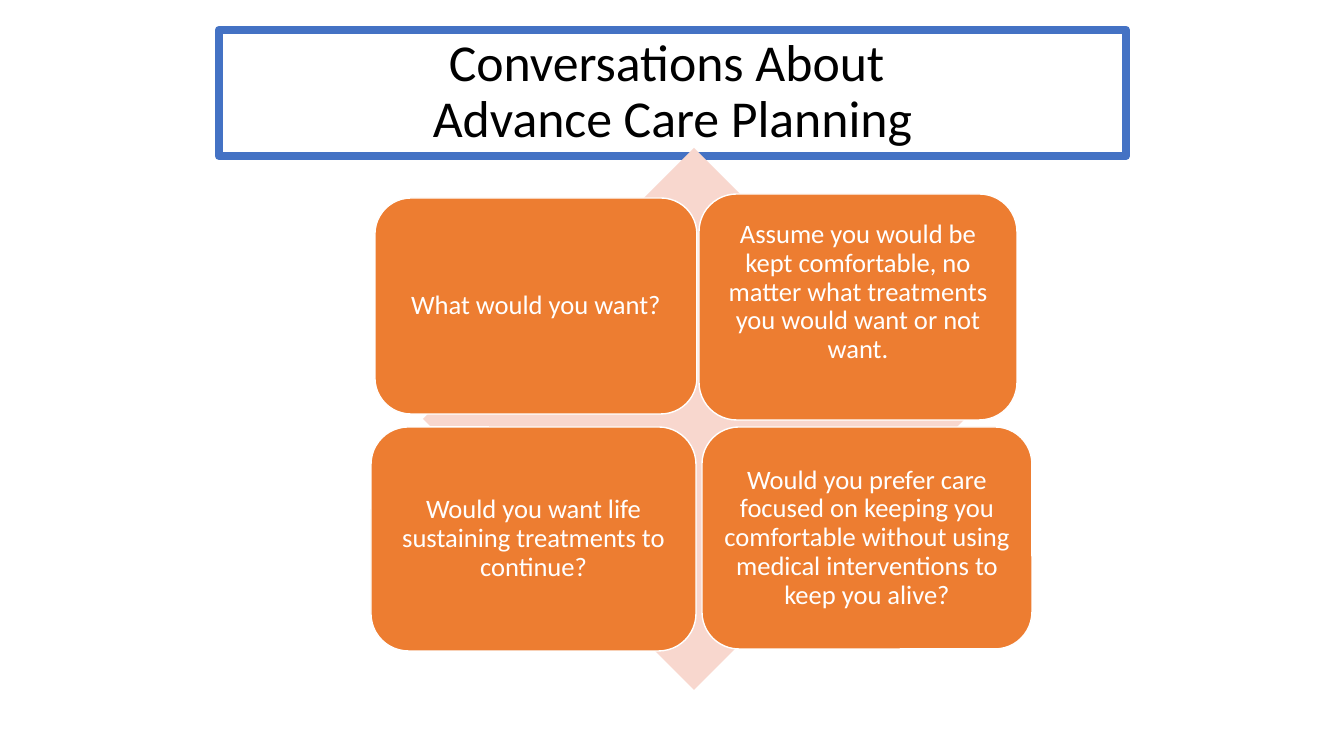
from pptx import Presentation
from pptx.dml.color import RGBColor
from pptx.enum.shapes import MSO_SHAPE
from pptx.enum.text import MSO_ANCHOR, MSO_AUTO_SIZE, PP_ALIGN
from pptx.util import Pt

DIAMOND = MSO_SHAPE.DIAMOND
ROUNDED = MSO_SHAPE.ROUNDED_RECTANGLE
MIDDLE = MSO_ANCHOR.MIDDLE
CENTER = PP_ALIGN.CENTER
NO_AUTOFIT = MSO_AUTO_SIZE.NONE

PX = 914400 / 100.8
COLORS = {
    "frame": "4472C4",
    "title": "000000",
    "diamond": "F8D7CE",
    "card": "ED7D31",
    "white": "FFFFFF",
}


def px(length):
    return round(length * PX)


def write(shape, wording, size, color, insets):
    frame = shape.text_frame
    frame_format = {
        "word_wrap": True,
        "auto_size": NO_AUTOFIT,
        "vertical_anchor": MIDDLE,
    }
    for side, inset in zip(("left", "top", "right", "bottom"), insets):
        frame_format[f"margin_{side}"] = px(inset)
    for name, value in frame_format.items():
        setattr(frame, name, value)
    frame.text = wording
    paragraph = frame.paragraphs[0]
    paragraph.alignment = CENTER
    paragraph.line_spacing = 0.9
    paragraph.font.color.rgb = RGBColor.from_string(COLORS[color])
    for name, value in {"name": "Calibri", "size": Pt(size)}.items():
        for run in paragraph.runs:
            setattr(run.font, name, value)
            run.font.color.rgb = RGBColor.from_string(COLORS[color])


deck = Presentation()
deck.slide_width = px(1344)
deck.slide_height = px(756)
slide = deck.slides.add_slide(deck.slide_layouts[5])

heading = slide.shapes.title
heading_place = {"left": 219, "top": 30, "width": 907, "height": 126}
for name, value in heading_place.items():
    setattr(heading, name, px(value))
heading.line.color.rgb = RGBColor.from_string(COLORS["frame"])
heading.line.width = Pt(6)
write(heading, "Conversations About \vAdvance Care Planning", 37, "title", (10, 5, 10, 5))

diamond = slide.shapes.add_shape(DIAMOND, px(423), px(148), px(542), px(542))
diamond.shadow.inherit = False
diamond.fill.solid()
diamond.fill.fore_color.rgb = RGBColor.from_string(COLORS["diamond"])
diamond.line.fill.background()

questions = [
    ((375, 198, 322, 216), 8, "What would you want?"),
    ((699, 194, 318, 226), 37,
     "Assume you would be kept comfortable, no matter what treatments "
     "you would want or not want."),
    ((371, 427, 325, 224), 8,
     "Would you want life sustaining treatments to continue?"),
    ((702, 427, 330, 222), 8,
     "Would you prefer care focused on keeping you comfortable without "
     "using medical interventions to keep you alive?"),
]
for place, bottom_inset, question in questions:
    card = slide.shapes.add_shape(ROUNDED, *map(px, place))
    card.shadow.inherit = False
    card.fill.solid()
    card.fill.fore_color.rgb = RGBColor.from_string(COLORS["card"])
    card.line.color.rgb = RGBColor.from_string(COLORS["white"])
    card.line.width = Pt(1)
    write(card, question, 19, "white", (8, 8, 8, bottom_inset))

deck.save("out.pptx")
